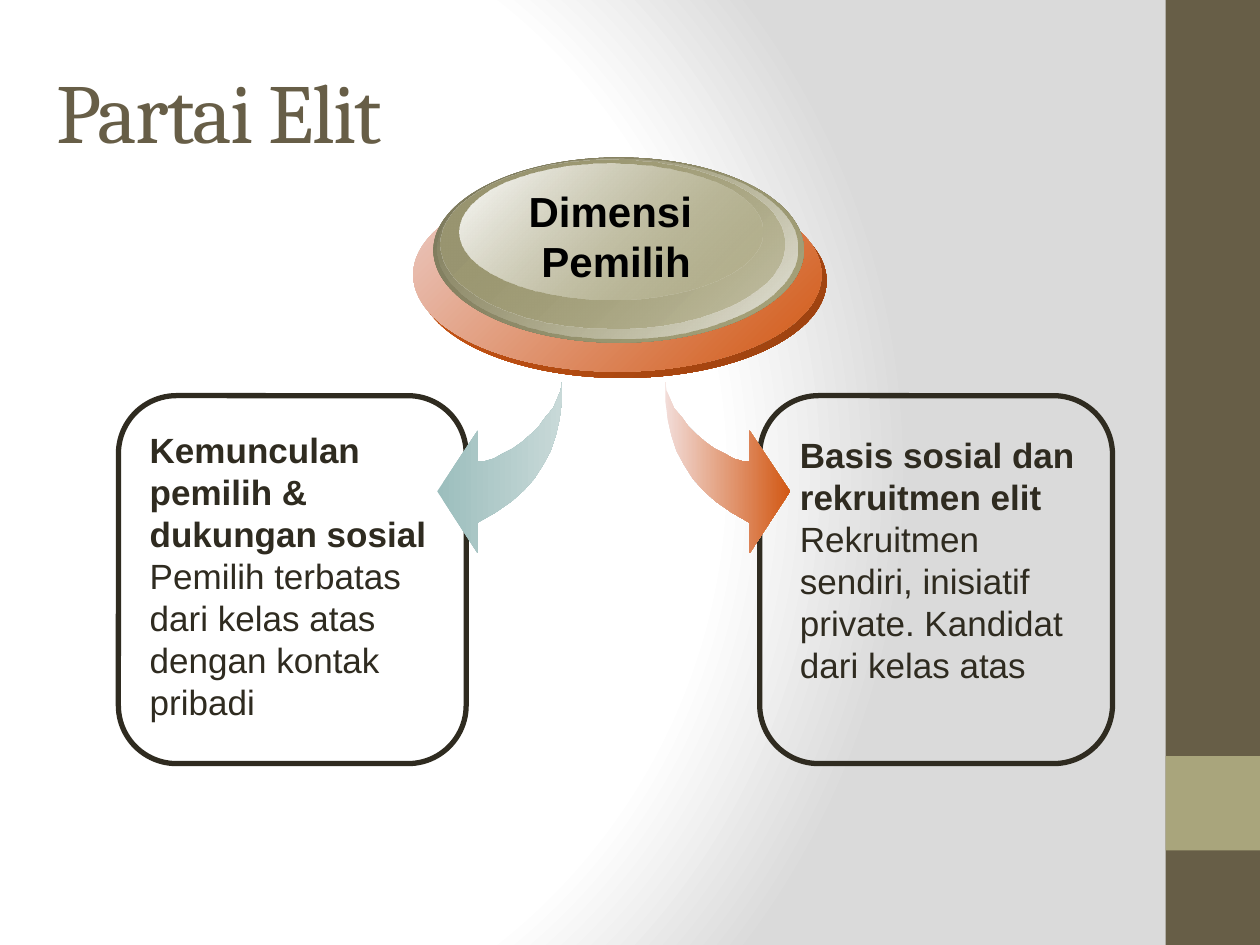
from dataclasses import dataclass
from typing import Optional

from lxml import etree
from pptx import Presentation
from pptx import util as u
from pptx.dml.color import RGBColor
from pptx.enum import shapes, text
from pptx.oxml.ns import qn

PX = 9144
WHITE = RGBColor(0xFF, 0xFF, 0xFF)
GREY = RGBColor(0xDA, 0xDA, 0xDA)
BLACK = RGBColor(0, 0, 0)
BROWN = RGBColor(0x67, 0x5E, 0x47)
INK = RGBColor(0x2F, 0x2B, 0x20)
OLIVE = RGBColor(0xA9, 0xA5, 0x7C)
OLIVE_MID = RGBColor(0x99, 0x95, 0x70)
OLIVE_DARK = RGBColor(0x79, 0x76, 0x59)
OLIVE_PALE = RGBColor(0xE6, 0xE5, 0xDD)
ORANGE = RGBColor(0xD2, 0x58, 0x14)
RUST = RGBColor(0x99, 0x40, 0x0F)
PINK = RGBColor(0xEC, 0xCC, 0xC6)
PINK_PALE = RGBColor(0xF2, 0xDC, 0xD8)
TEAL = RGBColor(0x9C, 0xBE, 0xBD)
TEAL_PALE = RGBColor(0xC8, 0xD9, 0xD8)

Box = tuple[int, int, int, int]


@dataclass
class Stop:
    color: RGBColor
    alpha: Optional[int] = None


@dataclass
class Disc:
    box: Box
    start: Stop
    end: Stop


@dataclass
class Run:
    text: str
    bold: bool


@dataclass
class Label:
    box: Box
    paragraphs: list[list[Run]]
    size: int
    color: RGBColor
    font: str = "Arial"
    align: text.PP_ALIGN = text.PP_ALIGN.LEFT
    anchor: text.MSO_ANCHOR = text.MSO_ANCHOR.TOP
    wrap: bool = True


DISCS = [
    Disc((332, 146, 324, 154), Stop(ORANGE), Stop(RUST)),
    Disc((328, 141, 324, 154), Stop(PINK), Stop(ORANGE)),
    Disc((344, 125, 294, 147), Stop(OLIVE_DARK), Stop(OLIVE)),
    Disc((347, 126, 286, 143), Stop(OLIVE, 0), Stop(OLIVE_PALE)),
    Disc((350, 127, 273, 134), Stop(OLIVE_MID), Stop(OLIVE, 48)),
    Disc((365, 130, 240, 108), Stop(WHITE), Stop(OLIVE, 38)),
]
ARROW = [
    (528, 303), (528, 318), (530, 333), (533, 346), (537, 358), (543, 369),
    (550, 380), (558, 389), (568, 398), (581, 407), (595, 415), (595, 439),
    (627, 390), (595, 342), (595, 366), (589, 366), (582, 364), (575, 360),
    (567, 356), (560, 351), (553, 345), (546, 338), (541, 331), (535, 324),
    (532, 317), (529, 310),
]
MIRROR_SUM = 974

TITLE = Label((35, 25, 865, 125), [[Run("Partai Elit", False)]], 48, BROWN,
              font="Cambria", anchor=text.MSO_ANCHOR.MIDDLE)
VOTERS = Label((109, 335, 244, 246), [[
    Run("Kemunculan pemilih & dukungan sosial ", True),
    Run("Pemilih terbatas dari kelas atas dengan kontak pribadi", False),
]], 20, INK)
DIMENSION = Label((409, 142, 160, 91),
                  [[Run("Dimensi ", True)], [Run("Pemilih", True)]], 24, BLACK,
                  align=text.PP_ALIGN.CENTER, wrap=False)
BASIS = Label((625, 339, 242, 212), [
    [Run("Basis sosial dan rekruitmen elit", True)],
    [Run("Rekruitmen sendiri, inisiatif private. Kandidat dari kelas atas", False)],
], 20, INK)


def emu(box: Box) -> list[int]:
    return [v * PX for v in box]


def set_gradient(fill, root, start: Stop, end: Stop, angle: int) -> None:
    fill.gradient()
    fill.gradient_angle = -angle % 360
    for stop, spec in zip(fill.gradient_stops, (start, end)):
        stop.color.rgb = spec.color
    for clr, spec in zip(root.iter(qn("a:srgbClr")), (start, end)):
        if spec.alpha is not None:
            etree.SubElement(clr, qn("a:alpha"), val=str(spec.alpha * 1000))


def add_background(s) -> None:
    fill = s.background.fill
    set_gradient(fill, s._element, Stop(WHITE), Stop(GREY), 0)
    fill.gradient_stops[0].position = 0.75
    grad = next(s._element.iter(qn("a:gradFill")))
    grad.remove(grad.find(qn("a:lin")))
    path = etree.SubElement(grad, qn("a:path"), attrib={"path": "circle"})
    etree.SubElement(path, qn("a:fillToRect"), l="20000", t="50000",
                     r="100000", b="50000")


def add_band(s, box: Box, color: RGBColor) -> None:
    sp = s.shapes.add_shape(shapes.MSO_SHAPE.RECTANGLE, *emu(box))
    sp.shadow.inherit = False
    sp.fill.solid()
    sp.fill.fore_color.rgb = color
    sp.line.fill.background()


def add_frame(s, box: Box) -> None:
    sp = s.shapes.add_shape(shapes.MSO_SHAPE.ROUNDED_RECTANGLE, *emu(box))
    sp.adjustments[0] = 0.167
    sp.shadow.inherit = False
    sp.fill.background()
    sp.line.color.rgb = INK
    sp.line.width = u.Pt(3)


def finish_gradient(sp, start: Stop, end: Stop, angle: int) -> None:
    sp.shadow.inherit = False
    sp.line.fill.background()
    set_gradient(sp.fill, sp._element.spPr, start, end, angle)


def add_arrow(s, points: list[tuple[int, int]], start: RGBColor, end: RGBColor) -> None:
    builder = s.shapes.build_freeform(*points[0], scale=PX)
    builder.add_line_segments(points[1:], close=True)
    finish_gradient(builder.convert_to_shape(), Stop(start), Stop(end), 0)


def add_discs(s, discs: list[Disc]) -> None:
    group = s.shapes.add_group_shape()
    for disc in discs:
        sp = group.shapes.add_shape(shapes.MSO_SHAPE.OVAL, *emu(disc.box))
        finish_gradient(sp, disc.start, disc.end, 45)


def add_label(s, label: Label):
    sp = s.shapes.add_textbox(*emu(label.box))
    tf = sp.text_frame
    tf.word_wrap = label.wrap
    tf.vertical_anchor = label.anchor
    for i, runs in enumerate(label.paragraphs):
        p = tf.add_paragraph() if i else tf.paragraphs[0]
        p.alignment = label.align
        p.font.name = label.font
        p.font.size = u.Pt(label.size)
        p.font.color.rgb = label.color
        for run in runs:
            r = p.add_run()
            r.text = run.text
            r.font.bold = run.bold
    return sp


def main() -> None:
    prs = Presentation()
    prs.slide_width, prs.slide_height = 1000 * PX, 750 * PX
    s = prs.slides.add_slide(prs.slide_layouts[6])
    add_background(s)
    add_band(s, (925, 0, 75, 750), BROWN)
    add_band(s, (925, 600, 75, 75), OLIVE)
    title = add_label(s, TITLE)
    title.text_frame.paragraphs[0].runs[0].font._element.set("spc", "-100")
    add_frame(s, (603, 314, 280, 292))
    add_frame(s, (94, 314, 276, 292))
    add_label(s, VOTERS)
    add_arrow(s, [(MIRROR_SUM - x, y) for x, y in ARROW], TEAL, TEAL_PALE)
    add_arrow(s, ARROW, PINK_PALE, ORANGE)
    add_discs(s, DISCS)
    add_label(s, DIMENSION)
    add_label(s, BASIS)
    prs.save("out.pptx")


if __name__ == "__main__":
    main()
